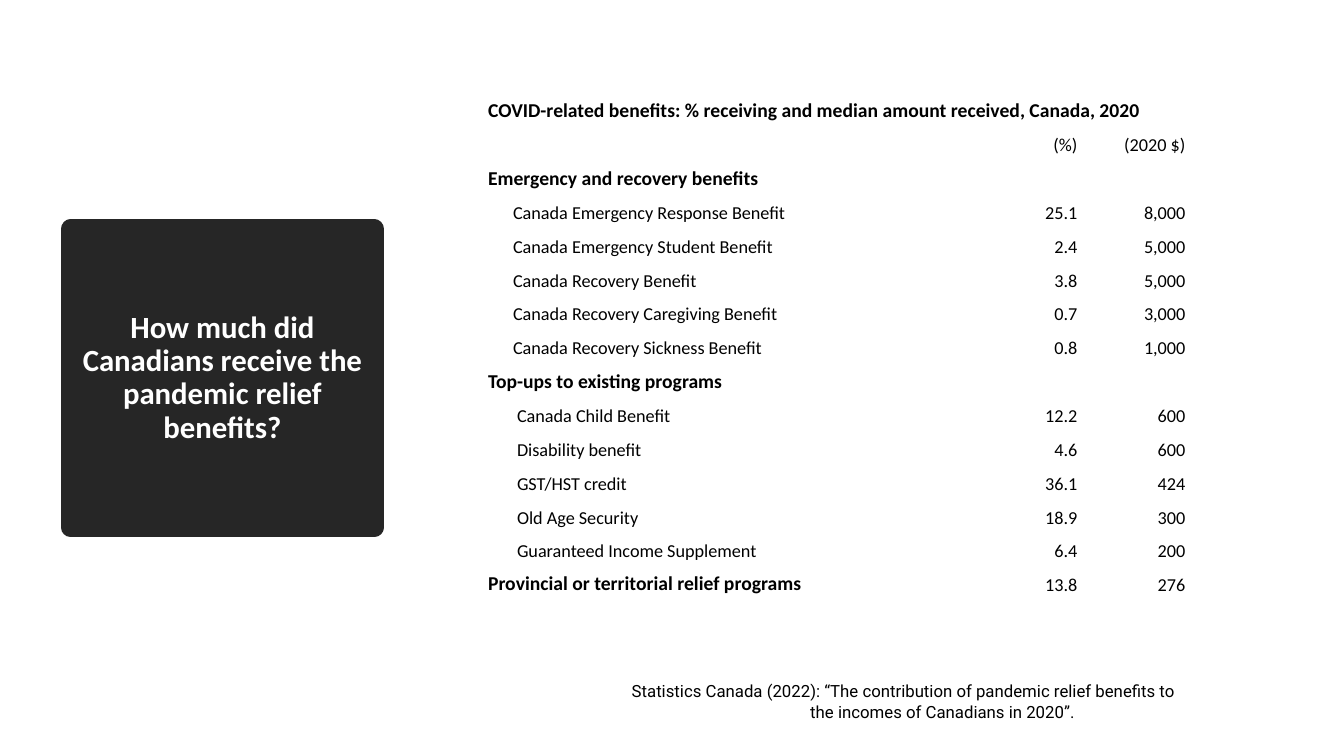
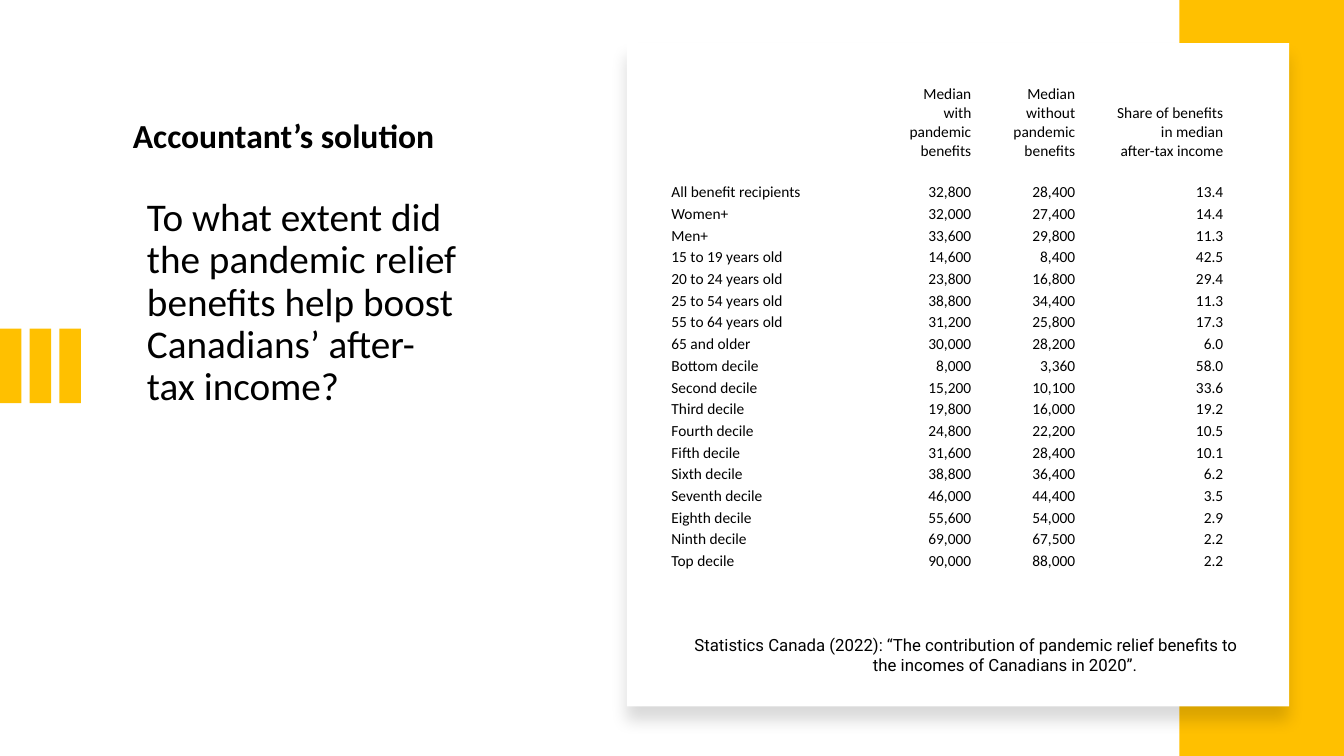
from dataclasses import dataclass

from lxml import etree
from pptx import Presentation
from pptx.dml.color import RGBColor
from pptx.enum import shapes, text
from pptx.oxml import ns
from pptx.util import Cm, Pt

LEFT, CENTER, RIGHT = text.PP_ALIGN.LEFT, text.PP_ALIGN.CENTER, text.PP_ALIGN.RIGHT
TOP, MIDDLE, BOTTOM = text.MSO_ANCHOR.TOP, text.MSO_ANCHOR.MIDDLE, text.MSO_ANCHOR.BOTTOM


@dataclass(frozen=True)
class Theme:
    font: str = "Calibri"
    source_font: str = "Roboto"
    ink: str = "000000"
    paper: str = "FFFFFF"
    panel: str = "262626"
    accent: str = "FFC000"
    question: int = 28
    subtitle: int = 24
    panel_title: int = 22
    group: int = 14
    body: int = 13
    source: int = 12
    small: int = 11
    tight: float = 0.9


THEME = Theme()
SLIDE_W, SLIDE_H = 33.87, 19.05

SOURCE = (
    "Statistics Canada (2022): “The contribution of pandemic relief benefits to",
    "the incomes of Canadians in 2020”.",
)

BENEFITS_TITLE = "COVID-related benefits: % receiving and median amount received, Canada, 2020"
EMERGENCY = [
    ("Canada Emergency Response Benefit", "25.1", "8,000"),
    ("Canada Emergency Student Benefit", "2.4", "5,000"),
    ("Canada Recovery Benefit", "3.8", "5,000"),
    ("Canada Recovery Caregiving Benefit", "0.7", "3,000"),
    ("Canada Recovery Sickness Benefit", "0.8", "1,000"),
]
TOP_UPS = [
    ("Canada Child Benefit", "12.2", "600"),
    ("Disability benefit", "4.6", "600"),
    ("GST/HST credit", "36.1", "424"),
    ("Old Age Security", "18.9", "300"),
    ("Guaranteed Income Supplement", "6.4", "200"),
]
INCOME = [
    ("", "Median with pandemic benefits", "Median\nwithout pandemic benefits",
     "Share of benefits\nin median\nafter-tax income"),
    ("All benefit recipients", "32,800", "28,400", "13.4"),
    ("Women+", "32,000", "27,400", "14.4"),
    ("Men+", "33,600", "29,800", "11.3"),
    ("15 to 19 years old", "14,600", "8,400", "42.5"),
    ("20 to 24 years old", "23,800", "16,800", "29.4"),
    ("25 to 54 years old", "38,800", "34,400", "11.3"),
    ("55 to 64 years old", "31,200", "25,800", "17.3"),
    ("65 and older", "30,000", "28,200", "6.0"),
    ("Bottom decile", "8,000", "3,360", "58.0"),
    ("Second decile", "15,200", "10,100", "33.6"),
    ("Third decile", "19,800", "16,000", "19.2"),
    ("Fourth decile", "24,800", "22,200", "10.5"),
    ("Fifth decile", "31,600", "28,400", "10.1"),
    ("Sixth decile", "38,800", "36,400", "6.2"),
    ("Seventh decile", "46,000", "44,400", "3.5"),
    ("Eighth decile", "55,600", "54,000", "2.9"),
    ("Ninth decile", "69,000", "67,500", "2.2"),
    ("Top decile", "90,000", "88,000", "2.2"),
]


def rgb(color):
    return RGBColor.from_string(color)


def format_paragraph(p, size, bold=False, color=THEME.ink, font=THEME.font,
                     align=LEFT, spacing=None):
    p.font.name, p.font.size, p.font.bold = font, Pt(size), bold
    p.font.color.rgb = rgb(color)
    p.alignment = align
    if spacing:
        p.line_spacing = spacing


def set_text(sp, content, size, anchor=TOP, **style):
    tf = sp.text_frame
    tf.text = content
    tf.word_wrap = True
    tf.auto_size = text.MSO_AUTO_SIZE.NONE
    tf.vertical_anchor = anchor
    for p in tf.paragraphs:
        format_paragraph(p, size, **style)


def place(sp, x, y, w, h):
    sp.left, sp.top, sp.width, sp.height = Cm(x), Cm(y), Cm(w), Cm(h)


def add_slide(prs):
    return prs.slides.add_slide(prs.slide_layouts.get_by_name("Title Only"))


def add_rect(slide, x, y, w, h, color):
    sp = slide.shapes.add_shape(
        shapes.MSO_SHAPE.RECTANGLE, Cm(x), Cm(y), Cm(w), Cm(h))
    sp.shadow.inherit = False
    sp.fill.solid()
    sp.fill.fore_color.rgb = rgb(color)
    sp.line.fill.background()
    return sp


def add_soft_shadow(sp):
    effects = sp._element.spPr.find(ns.qn("a:effectLst"))
    shadow = etree.SubElement(
        effects, ns.qn("a:outerShdw"), blurRad=str(Pt(11)), dist=str(Pt(10)),
        dir="5400000", algn="t", rotWithShape="0")
    color = etree.SubElement(shadow, ns.qn("a:srgbClr"), val=THEME.ink)
    etree.SubElement(color, ns.qn("a:alpha"), val="15000")


def add_source(slide, x, y):
    sp = slide.shapes.add_textbox(Cm(x), Cm(y), Cm(15.5), Cm(1.27))
    set_text(sp, "\n".join(SOURCE), THEME.source, font=THEME.source_font)
    last = sp.text_frame.paragraphs[-1]
    last._p.get_or_add_pPr().set("marL", str(Cm(4.5)))


def fill_cell(cell, content, size, bold=False, align=LEFT, indent=0, below=0, anchor=BOTTOM):
    cell.text = content
    cell.fill.background()
    cell.vertical_anchor = anchor
    cell.margin_left = Cm(0.03 + indent)
    cell.margin_right = cell.margin_top = Cm(0.03)
    cell.margin_bottom = Cm(below)
    for p in cell.text_frame.paragraphs:
        format_paragraph(p, size, bold, align=align)


def add_table(slide, x, y, widths, n_rows, header_h, body_h):
    """Add an unstyled table whose rows below the first share body_h equally."""
    table = slide.shapes.add_table(
        n_rows, len(widths), Cm(x), Cm(y), Cm(sum(widths)), Cm(header_h + body_h)).table
    table.first_row = table.horz_banding = False
    for column, width in zip(table.columns, widths):
        column.width = Cm(width)
    for i, row in enumerate(table.rows):
        row.height = Cm(body_h / (n_rows - 1) if i else header_h)
    return table


def add_benefits_table(slide):
    def group(label, *values):
        return (label, *values), dict(size=THEME.group, bold=True)

    def items(rows, indent):
        return [(row, dict(size=THEME.body, indent=indent)) for row in rows]

    rows = [
        group(BENEFITS_TITLE),
        *items([("", "(%)", "(2020 $)")], 0),
        group("Emergency and recovery benefits"),
        *items(EMERGENCY, 0.63),
        group("Top-ups to existing programs"),
        *items(TOP_UPS, 0.73),
        group("Provincial or territorial relief programs", "13.8", "276"),
        *items([()], 0),
    ]
    widths = (12.17, 2.74, 2.72, 0.1)
    table = add_table(slide, 12.27, 2.46, widths, len(rows), 0.77, 12.8)
    for i, (values, label_style) in enumerate(rows):
        label, *numbers = [*values, *[""] * (len(widths) - len(values))]
        has_numbers = label_style.get("bold") and any(numbers)
        fill_cell(table.cell(i, 0), label, below=0.2,
                  anchor=TOP if has_numbers else BOTTOM, **label_style)
        for j, number in enumerate(numbers, 1):
            fill_cell(table.cell(i, j), number, THEME.body, align=RIGHT, below=0.2)
    table.cell(0, 0).merge(table.cell(0, len(widths) - 1))


def add_income_table(slide):
    table = add_table(slide, 16.89, 2.08, (5.61, 2.01, 2.62, 3.73), len(INCOME), 2.46, 9.85)
    for i, row in enumerate(INCOME):
        for j, value in enumerate(row):
            fill_cell(table.cell(i, j), value, THEME.small,
                      align=RIGHT if j else LEFT, below=0 if i else 0.5)


def build_benefits_slide(prs):
    slide = add_slide(prs)
    title = slide.shapes.title
    place(title, 1.78, 5.77, 7.65, 7.52)
    title.fill.solid()
    title.fill.fore_color.rgb = title.line.color.rgb = rgb(THEME.panel)
    title.line.width = Pt(13.75)
    set_text(title, "How much did Canadians receive the pandemic relief benefits?",
             THEME.panel_title, MIDDLE, bold=True, color=THEME.paper,
             align=CENTER, spacing=THEME.tight)
    add_benefits_table(slide)
    add_source(slide, 15.67, 17.04)


def build_income_slide(prs):
    slide = add_slide(prs)
    title = slide.shapes.title
    place(title, 3.45, 4.85, 8.31, 10.13)
    set_text(title, "To what extent did the pandemic relief benefits help boost "
             "Canadians’ after-tax income?", THEME.question, spacing=THEME.tight)
    subtitle = slide.shapes.add_textbox(Cm(3.1), Cm(2.64), Cm(10.31), Cm(1.4))
    set_text(subtitle, "Accountant’s solution", THEME.subtitle, BOTTOM,
             bold=True, spacing=THEME.tight)
    for i in range(3):
        add_rect(slide, 0.75 * i, 8.28, 0.54, 1.88, THEME.accent)
    band_w = 4.15
    add_rect(slide, SLIDE_W - band_w, 0, band_w, SLIDE_H, THEME.accent)
    add_soft_shadow(add_rect(slide, 15.8, 1.09, 16.69, 16.71, THEME.paper))
    add_income_table(slide)
    add_source(slide, 17.25, 15.87)


def main():
    prs = Presentation()
    prs.slide_width, prs.slide_height = Cm(SLIDE_W), Cm(SLIDE_H)
    build_benefits_slide(prs)
    build_income_slide(prs)
    prs.save("out.pptx")


if __name__ == "__main__":
    main()
